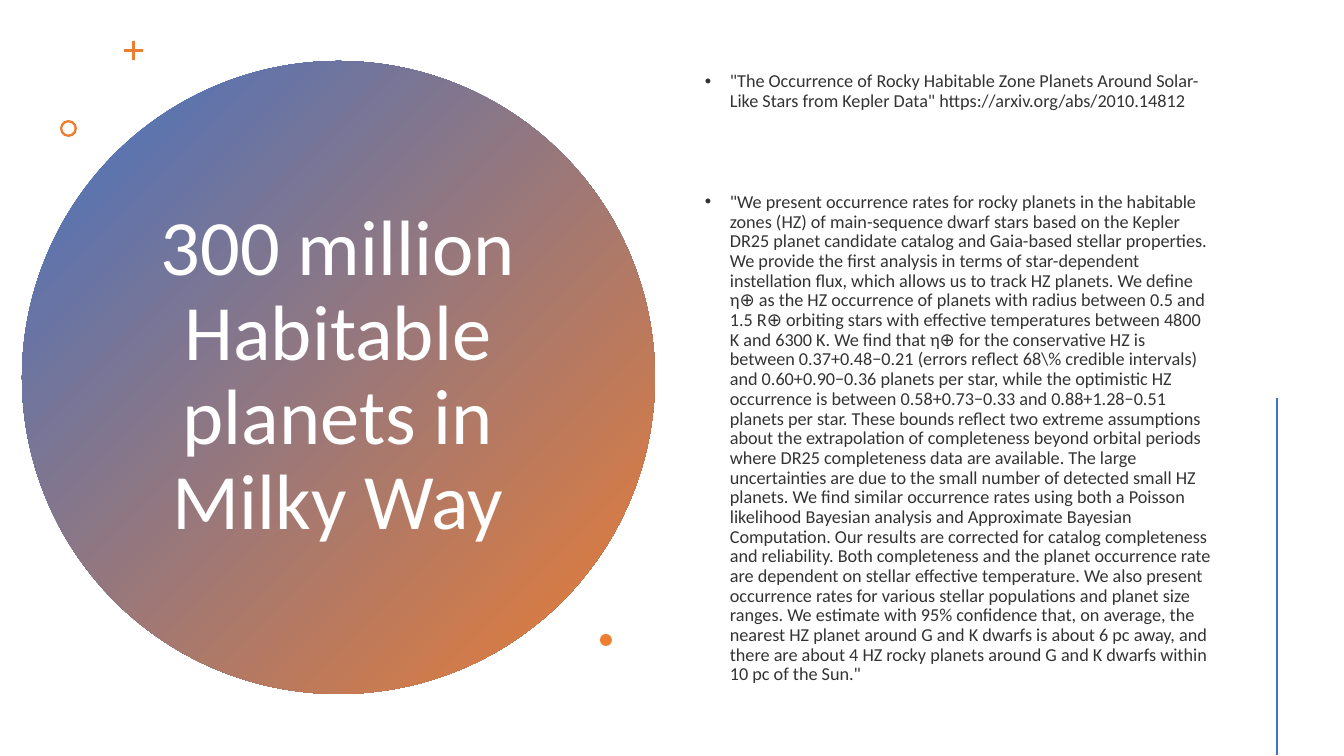
from lxml.etree import SubElement
from pptx import Presentation
from pptx.dml.color import RGBColor
from pptx.enum.shapes import MSO_CONNECTOR, MSO_SHAPE
from pptx.enum.text import MSO_ANCHOR, PP_ALIGN
from pptx.oxml.ns import qn
from pptx.util import Pt

TITLE = "300 million Habitable planets in Milky Way"
CITATION = [
    '"The Occurrence of Rocky Habitable Zone Planets Around Solar-Like Stars from Kepler Data"',
    "https://arxiv.org/abs/2010.14812",
]
ABSTRACT = [
    '"We present occurrence rates for rocky planets in the habitable zones (HZ) of '
    "main-sequence dwarf stars based on the Kepler DR25 planet candidate catalog and "
    "Gaia-based stellar properties.",
    "We provide the first analysis in terms of star-dependent instellation flux, "
    "which allows us to track HZ planets.",
    "We define η⊕ as the HZ occurrence of planets with radius between 0.5 and 1.5 R⊕ "
    "orbiting stars with effective temperatures between 4800 K and 6300 K.",
    "We find that η⊕ for the conservative HZ is between 0.37+0.48−0.21 (errors reflect "
    "68\\% credible intervals) and 0.60+0.90−0.36 planets per star, while the optimistic "
    "HZ occurrence is between 0.58+0.73−0.33 and 0.88+1.28−0.51 planets per star.",
    "These bounds reflect two extreme assumptions about the extrapolation of completeness "
    "beyond orbital periods where DR25 completeness data are available.",
    "The large uncertainties are due to the small number of detected small HZ planets.",
    "We find similar occurrence rates using both a Poisson likelihood Bayesian analysis "
    "and Approximate Bayesian Computation.",
    "Our results are corrected for catalog completeness and reliability.",
    "Both completeness and the planet occurrence rate are dependent on stellar effective "
    "temperature.",
    "We also present occurrence rates for various stellar populations and planet size ranges.",
    "We estimate with 95% confidence that, on average, the nearest HZ planet around G and K "
    "dwarfs is about 6 pc away, and there are about 4 HZ rocky planets around G and K dwarfs "
    'within 10 pc of the Sun."',
]
BULLETS = [(CITATION, 0), (ABSTRACT, 58)]

COLORS = {"blue": "4472C4", "orange": "ED7D31", "white": "FFFFFF", "ink": "333333"}
FONT = "Calibri"
DISC = (22, 61, 633)
ORNAMENTS = [
    (MSO_SHAPE.CROSS, (124, 41, 19), 0.43),
    (MSO_SHAPE.DONUT, (60, 120, 17), 0.14),
    (MSO_SHAPE.OVAL, (600, 634, 12), None),
]
TITLE_BOX = (137, 142, 402, 470)
BODY_BOX = (695, 57, 526, 643)
RULE = (1277, 398, 1277, 755)
INDENT = 25


def px(length):
    return round(length * 914400 / 100.8)


def color(name):
    return RGBColor.from_string(COLORS[name])


def add_round(slide, kind, place):
    left, top, size = map(px, place)
    shape = slide.shapes.add_shape(kind, left, top, size, size)
    shape.shadow.inherit = False
    shape.line.fill.background()
    return shape


def add_frame(slide, box):
    frame = slide.shapes.add_textbox(*map(px, box)).text_frame
    frame.word_wrap = True
    frame.vertical_anchor = MSO_ANCHOR.MIDDLE
    return frame


def style(paragraph, size, ink):
    paragraph.line_spacing = 0.9
    for run in paragraph.runs:
        run.font.name = FONT
        run.font.size = Pt(size)
        run.font.color.rgb = color(ink)


def add_bullet(paragraph):
    props = paragraph._p.get_or_add_pPr()
    props.set("marL", str(px(INDENT)))
    props.set("indent", str(-px(INDENT)))
    SubElement(props, qn("a:buFont")).set("typeface", "Arial")
    SubElement(props, qn("a:buChar")).set("char", "•")


def main():
    deck = Presentation()
    deck.slide_width, deck.slide_height = px(1344), px(756)
    slide = deck.slides.add_slide(deck.slide_layouts[6])

    disc = add_round(slide, MSO_SHAPE.OVAL, DISC)
    disc.fill.gradient()
    disc.fill.gradient_angle = 315
    for stop, name, position in zip(disc.fill.gradient_stops, ("blue", "orange"), (0, 1)):
        stop.color.rgb = color(name)
        stop.position = position

    title = add_frame(slide, TITLE_BOX).paragraphs[0]
    title.text = TITLE
    title.alignment = PP_ALIGN.CENTER
    style(title, 56, "white")

    for kind, place, thickness in ORNAMENTS:
        ornament = add_round(slide, kind, place)
        ornament.fill.solid()
        ornament.fill.fore_color.rgb = color("orange")
        if thickness:
            ornament.adjustments[0] = thickness

    body = add_frame(slide, BODY_BOX)
    for index, (sentences, gap) in enumerate(BULLETS):
        bullet = body.add_paragraph() if index else body.paragraphs[0]
        bullet.text = " ".join(sentences)
        add_bullet(bullet)
        style(bullet, 13, "ink")
        if gap:
            bullet.space_before = Pt(gap)

    rule = slide.shapes.add_connector(MSO_CONNECTOR.STRAIGHT, *map(px, RULE))
    rule.line.color.rgb = color("blue")
    rule.line.width = Pt(2)
    SubElement(rule._element.spPr, qn("a:effectLst"))

    deck.save("out.pptx")


if __name__ == "__main__":
    main()
